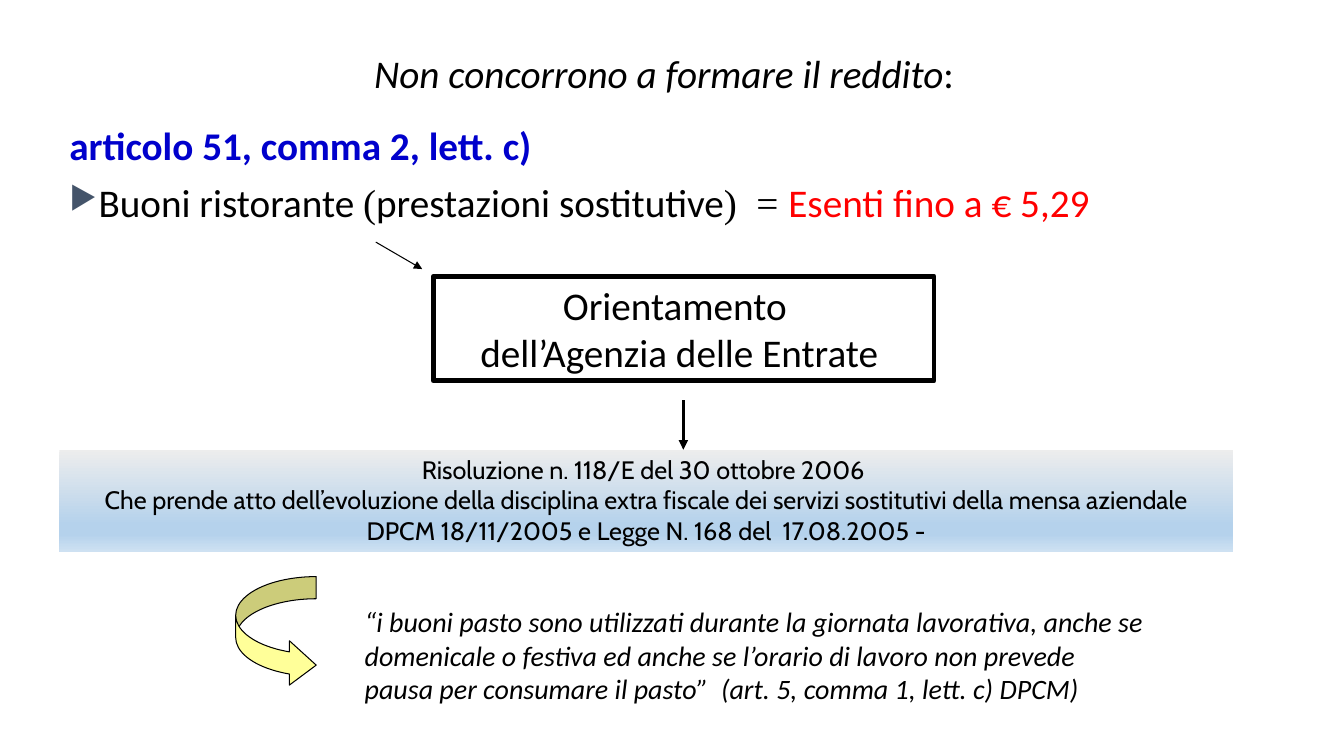
from lxml.etree import SubElement
from pptx import Presentation
from pptx.dml.color import RGBColor
from pptx.enum.shapes import MSO_CONNECTOR, MSO_SHAPE
from pptx.enum.text import MSO_ANCHOR, MSO_AUTO_SIZE, PP_ALIGN
from pptx.oxml.ns import qn
from pptx.util import Cm, Pt

BLACK = RGBColor(0x00, 0x00, 0x00)
BLUE = RGBColor(0x00, 0x00, 0xCC)
RED = RGBColor(0xFF, 0x00, 0x00)
SLATE = RGBColor(0x44, 0x54, 0x6A)
YELLOW = RGBColor(0xFF, 0xFF, 0x99)
BAND_STOPS = [
    (0, RGBColor(0xED, 0xED, 0xED)),
    (74, RGBColor(0xB5, 0xD2, 0xEC)),
    (83, RGBColor(0xB5, 0xD2, 0xEC)),
    (100, RGBColor(0xCE, 0xE1, 0xF2)),
]
SERIF = {"font": "Times New Roman"}

# Each paragraph is a list of runs: (text, differences from the block's style)
TITLE = [[("Non concorrono a formare il reddito", {"italic": True}), (":", {})]]
ARTICLE = [
    [("articolo 51, comma 2, lett. c)", {"color": BLUE, "bold": True})],
    [
        ("Buoni ristorante ", {}),
        ("(", SERIF),
        ("prestazioni sostitutive", {}),
        (")  = ", SERIF),
        ("Esenti fino a € 5,29", {"color": RED}),
    ],
]
GUIDANCE = [[("Orientamento  ", {})], [("dell’Agenzia delle Entrate ", {})]]
RESOLUTION = [
    [("Risoluzione n. 118/E del 30 ottobre 2006 ", {})],
    [("Che prende atto dell’evoluzione della disciplina extra fiscale dei "
      "servizi sostitutivi della mensa aziendale", {})],
    [(" DPCM 18/11/2005 e Legge N. 168 del  17.08.2005 - ", {})],
]
QUOTE = [
    [("“i buoni pasto sono utilizzati durante la giornata lavorativa, anche se", {})],
    [("domenicale o festiva ed anche se l’orario di lavoro non prevede", {})],
    [("pausa per consumare il pasto”  (art. 5, comma 1, lett. c) DPCM)", {})],
]

# Left, top, width, height in centimetres
TITLE_BOX = (6.93, 1.12, 19.61, 1.45)
ARTICLE_BOX = (1.5, 2.92, 30.78, 3)
GUIDANCE_BOX = (10.92, 6.96, 12.62, 2.64)
RESOLUTION_BOX = (1.5, 11.33, 29.57, 2.57)
CURVED_BOX = (5.94, 14.53, 2.03, 2.79)
QUOTE_BOX = (8.94, 15.11, 20.45, 2.82)
# Start x, start y, end x, end y in centimetres, then width in points
ARROWS = [(9.47, 6.1, 10.64, 6.78, 0.75), (17.22, 10.08, 17.22, 11.33, 2.25)]


def cm(values):
    return [Cm(value) for value in values]


def write(shape, paragraphs, size, font="Calibri", align=PP_ALIGN.LEFT, italic=False):
    frame = shape.text_frame
    frame.word_wrap = True
    frame.auto_size = MSO_AUTO_SIZE.NONE
    frame.vertical_anchor = MSO_ANCHOR.TOP
    for index, runs in enumerate(paragraphs):
        paragraph = frame.add_paragraph() if index else frame.paragraphs[0]
        paragraph.alignment = align
        for text, style in runs:
            run = paragraph.add_run()
            run.text = text
            run.font.size = Pt(size)
            run.font.name = style.get("font", font)
            run.font.color.rgb = style.get("color", BLACK)
            run.font.bold = style.get("bold", False)
            run.font.italic = style.get("italic", italic)
    return frame


def add_bullet(paragraph, character, color, percent):
    props = paragraph._p.get_or_add_pPr()
    bullet_color = SubElement(props, qn("a:buClr"))
    SubElement(bullet_color, qn("a:srgbClr"), val=str(color))
    SubElement(props, qn("a:buSzPct"), val=str(percent * 1000))
    SubElement(props, qn("a:buChar"), char=character)


def fill_downwards(shape, stops):
    """Fill the shape with a gradient that runs from top to bottom."""
    shape.fill.gradient()
    gradient = shape._element.spPr.find(qn("a:gradFill"))
    stop_list = gradient.find(qn("a:gsLst"))
    for stop in list(stop_list):
        stop_list.remove(stop)
    for percent, color in stops:
        stop = SubElement(stop_list, qn("a:gs"), pos=str(percent * 1000))
        SubElement(stop, qn("a:srgbClr"), val=str(color))
    gradient.find(qn("a:lin")).set("ang", str(90 * 60000))


def add_plain_shape(shapes, kind, box, line_width=None):
    shape = shapes.add_shape(kind, *cm(box))
    shape.shadow.inherit = False
    if line_width:
        shape.line.color.rgb = BLACK
        shape.line.width = Pt(line_width)
    else:
        shape.line.fill.background()
    return shape


def add_arrow(shapes, ends, width):
    arrow = shapes.add_connector(MSO_CONNECTOR.STRAIGHT, *cm(ends))
    arrow.line.color.rgb = BLACK
    arrow.line.width = Pt(width)
    SubElement(arrow.line._get_or_add_ln(), qn("a:tailEnd"), type="triangle")
    SubElement(arrow._element.spPr, qn("a:effectLst"))


def main():
    deck = Presentation()
    deck.slide_width, deck.slide_height = Cm(33.87), Cm(19.05)
    slide = deck.slides.add_slide(deck.slide_layouts[5])
    shapes = slide.shapes

    title = shapes.title
    title.left, title.top, title.width, title.height = cm(TITLE_BOX)
    write(title, TITLE, 28, align=PP_ALIGN.CENTER)

    article = write(shapes.add_textbox(*cm(ARTICLE_BOX)), ARTICLE, 28)
    voucher = article.paragraphs[1]
    voucher.alignment = PP_ALIGN.JUSTIFY
    voucher.line_spacing = 0.8
    voucher.space_before = Pt(14)
    add_bullet(voucher, "▶", SLATE, 80)

    guidance = add_plain_shape(shapes, MSO_SHAPE.RECTANGLE, GUIDANCE_BOX, 3.5)
    guidance.fill.background()
    write(guidance, GUIDANCE, 28, align=PP_ALIGN.CENTER)

    resolution = add_plain_shape(shapes, MSO_SHAPE.RECTANGLE, RESOLUTION_BOX)
    fill_downwards(resolution, BAND_STOPS)
    write(resolution, RESOLUTION, 18, font="Cabin", align=PP_ALIGN.CENTER)

    curved = add_plain_shape(shapes, MSO_SHAPE.CURVED_RIGHT_ARROW, CURVED_BOX, 0.75)
    curved.fill.solid()
    curved.fill.fore_color.rgb = YELLOW
    for index, ratio in enumerate((0.275, 0.55, 0.333)):
        curved.adjustments[index] = ratio

    write(shapes.add_textbox(*cm(QUOTE_BOX)), QUOTE, 20, italic=True)

    for *ends, width in ARROWS:
        add_arrow(shapes, ends, width)

    deck.save("out.pptx")


if __name__ == "__main__":
    main()
